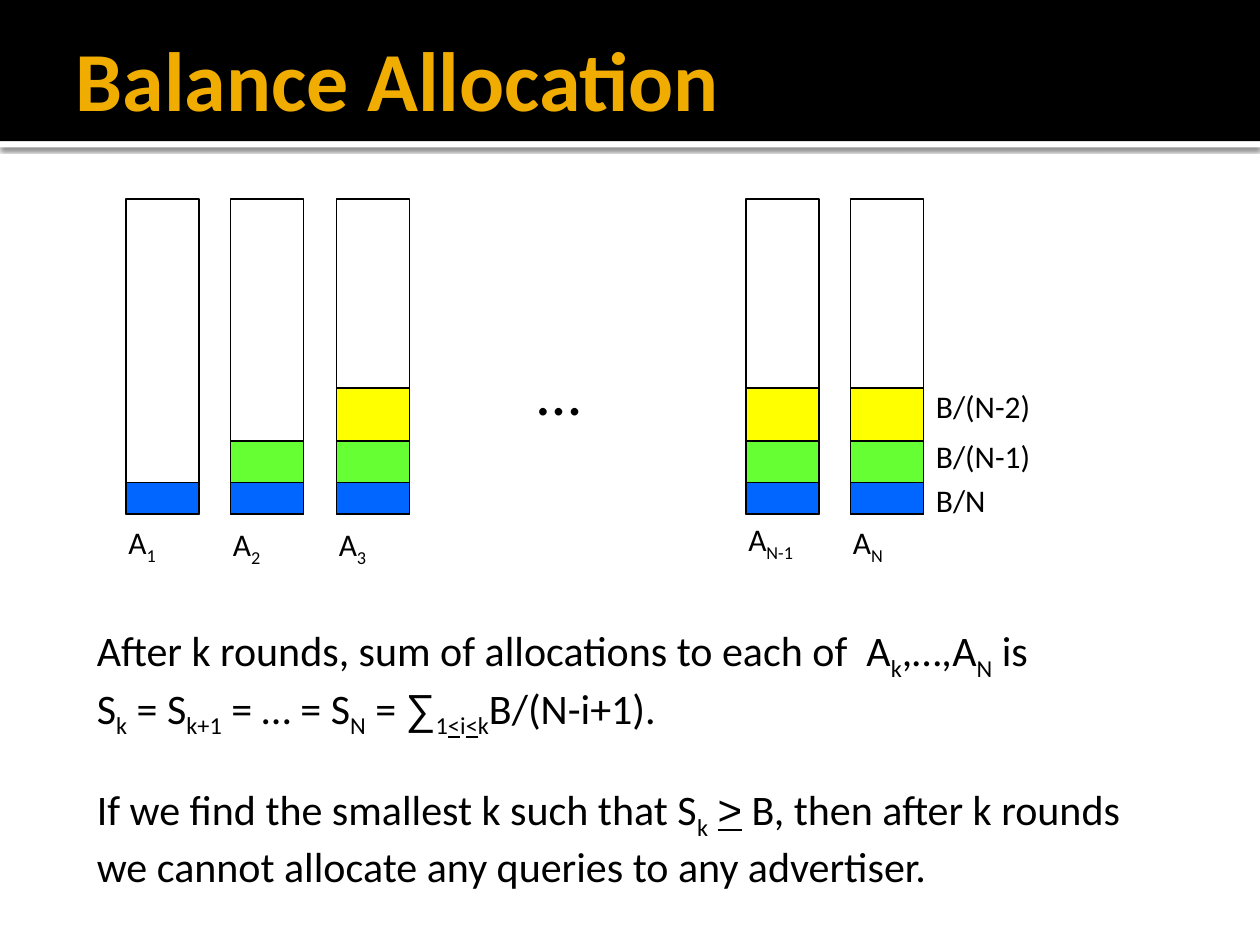
from lxml.etree import SubElement
from pptx import Presentation
from pptx.dml.color import RGBColor
from pptx.enum.shapes import MSO_SHAPE
from pptx.enum.text import MSO_ANCHOR, MSO_AUTO_SIZE, PP_ALIGN
from pptx.oxml.ns import qn
from pptx.util import Inches, Pt

COLORS = {"black": "000000", "white": "FFFFFF", "gold": "F0AD00",
          "blue": "0066FF", "green": "66FF33", "yellow": "FFFF00"}
ADVERTISERS = [("1", 1, 1, 4.1), ("2", 1.83, 2, 4.12), ("3", 2.67, 3, 4.12),
               ("N-1", 5.92, 3, 4.08), ("N", 6.75, 3, 4.1)]
ROUNDS = [("B/N", "blue", 3.83, 0.25, 3.77), ("B/(N-1)", "green", 3.5, 0.33, 3.42),
          ("B/(N-2)", "yellow", 3.08, 0.42, 3.02)]
SUM_LINES = [
    [("After k rounds, sum of allocations to each of  A", ""), ("k", "sub"),
     (",…,A", ""), ("N", "sub"), (" is", "")],
    [("S", ""), ("k", "sub"), (" = S", ""), ("k+1", "sub"), (" = … = S", ""),
     ("N", "sub"), (" = ", ""), ("∑", "arial"), ("1", "sub"), ("<", "sub line"),
     ("i", "sub"), ("<", "sub line"), ("k", "sub"), ("B/(N-i+1).", "")],
]
LIMIT_LINES = [
    [("If we find the smallest k such that S", ""), ("k", "sub"), (" ", ""),
     (">", "arial line"), (" B, then after k rounds", "")],
    [("we cannot allocate any queries to any advertiser.", "")],
]


def rgb(name):
    """Return the named colour."""
    return RGBColor.from_string(COLORS[name])


def set_font(paragraph, size, color="black"):
    """Set the shared font of a paragraph."""
    paragraph.font.name = "Calibri"
    paragraph.font.size = Pt(size)
    paragraph.font.color.rgb = rgb(color)


def add_rect(slide, box, fill=None, outlined=True):
    """Add a rectangle with an optional fill and outline."""
    rect = slide.shapes.add_shape(MSO_SHAPE.RECTANGLE, *map(Inches, box))
    rect.shadow.inherit = False
    if fill:
        rect.fill.solid()
        rect.fill.fore_color.rgb = rgb(fill)
    else:
        rect.fill.background()
    if outlined:
        rect.line.color.rgb = rgb("black")
        rect.line.width = Pt(0.75)
    else:
        rect.line.fill.background()
    return rect


def add_text(slide, box, lines, size):
    """Add lines made of (text, style) pieces."""
    frame = slide.shapes.add_textbox(*map(Inches, box)).text_frame
    frame.word_wrap = False
    frame.auto_size = MSO_AUTO_SIZE.SHAPE_TO_FIT_TEXT
    for index, pieces in enumerate(lines):
        paragraph = frame.add_paragraph() if index else frame.paragraphs[0]
        paragraph.alignment = PP_ALIGN.LEFT
        set_font(paragraph, size)
        for text, style in pieces:
            run = paragraph.add_run()
            run.text = text
            if "arial" in style:
                run.font.name = "Arial"
            if "line" in style:
                run.font.underline = True
            if "sub" in style:
                run._r.get_or_add_rPr().set("baseline", "-25000")


def add_header(slide, box):
    """Place the black header, its shadowed white edge and the title."""
    left, top, width, height = box
    edge = add_rect(slide, (left, top + height, width, 0.05), "white", False)
    effects = edge._element.spPr.find(qn("a:effectLst"))
    shadow = SubElement(effects, qn("a:outerShdw"), blurRad=str(Pt(2.5)),
                        dist=str(Pt(0.8)), dir="5400000", algn="tl", rotWithShape="0")
    shade = SubElement(shadow, qn("a:srgbClr"), val=COLORS["black"])
    SubElement(shade, qn("a:alpha"), val="60000")
    add_rect(slide, box, "black", False)

    title = slide.shapes.title
    slide.shapes._spTree.append(title._element)
    title.left, title.top = Inches(left + 0.5), Inches(top + 0.08)
    title.width, title.height = Inches(width - 0.5), Inches(1.08)
    frame = title.text_frame
    frame.text = "Balance Allocation"
    frame.vertical_anchor = MSO_ANCHOR.MIDDLE
    frame.margin_left = Inches(0.1)
    frame.margin_right = frame.margin_top = frame.margin_bottom = Inches(0.05)
    heading = frame.paragraphs[0]
    heading.alignment = PP_ALIGN.LEFT
    set_font(heading, 48, "gold")
    heading.font.bold = True


def add_allocation(slide, box):
    """Draw the advertisers' budgets and the share taken in each round."""
    left, top, width, height = box
    bar_width = 0.58
    for name, offset, _, label_top in ADVERTISERS:
        x = left + offset
        add_rect(slide, (x, top, bar_width, height))
        add_text(slide, (x - 0.08, label_top, 0.68, 0.4), [[("A", ""), (name, "sub")]], 18)
    add_text(slide, (left + 4.17, top + 1.17, 0.61, 0.7), [[("…", "")]], 36)
    for level, (share, color, y, share_height, label_top) in enumerate(ROUNDS):
        for _, offset, rounds, _ in ADVERTISERS:
            if rounds > level:
                add_rect(slide, (left + offset, y, bar_width, share_height), color)
        add_text(slide, (left + width, label_top, 1.17, 0.4), [[(share, "")]], 18)


def main():
    """Build and save the slide."""
    deck = Presentation()
    deck.slide_width, deck.slide_height = Inches(10), Inches(7.5)
    slide = deck.slides.add_slide(deck.slide_layouts[5])
    add_header(slide, (0, 0, 10, 1.12))
    add_allocation(slide, (0, 1.58, 7.33, 2.5))
    add_text(slide, (0.67, 4.91, 8.07, 0.91), SUM_LINES, 24)
    add_text(slide, (0.67, 6.17, 8.48, 0.91), LIMIT_LINES, 24)
    deck.save("out.pptx")


if __name__ == "__main__":
    main()
